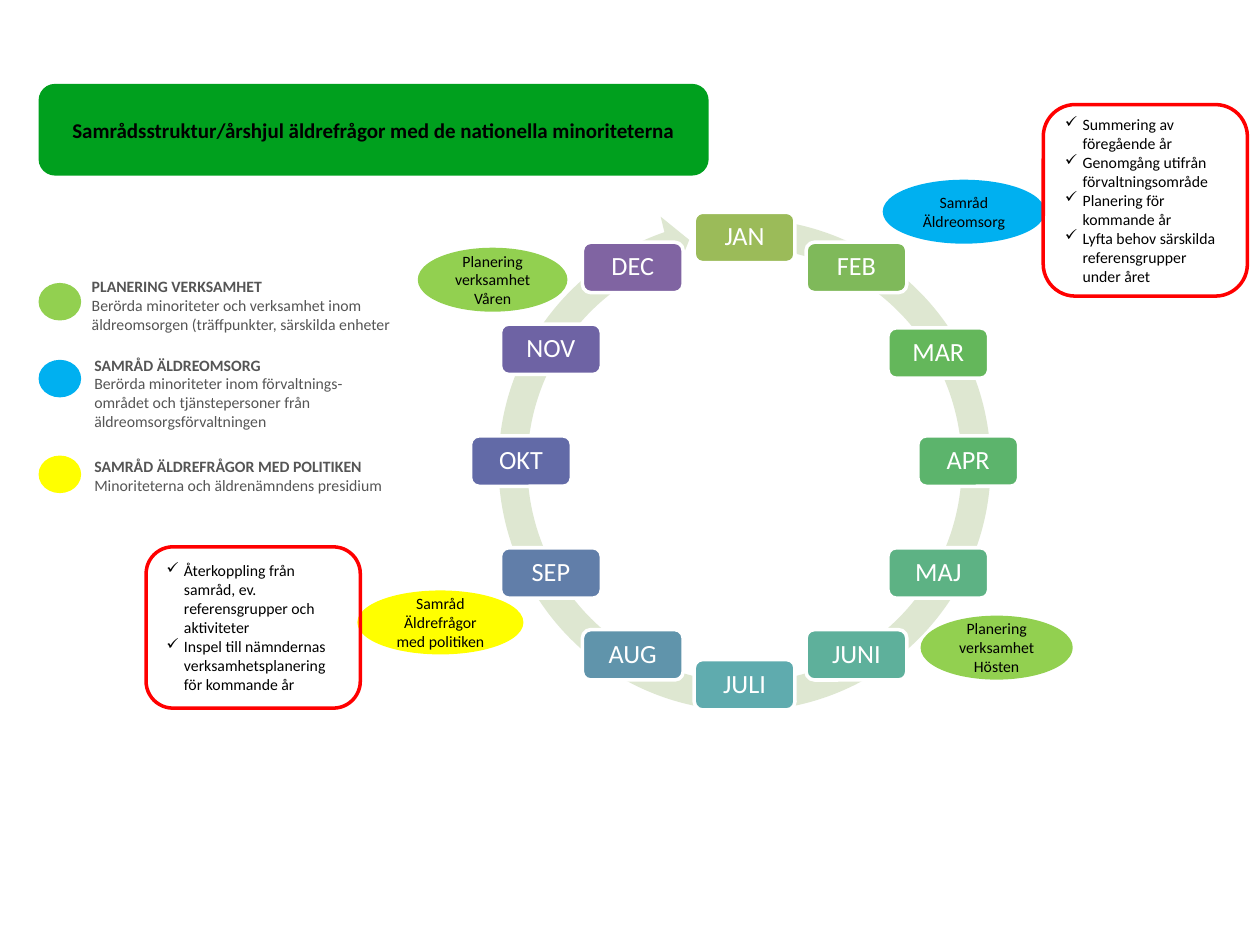
from math import cos, radians, sin

from lxml.etree import SubElement
from pptx import Presentation
from pptx.dml.color import RGBColor
from pptx.enum.shapes import MSO_SHAPE
from pptx.enum.text import MSO_ANCHOR, MSO_AUTO_SIZE, PP_ALIGN
from pptx.oxml.ns import qn
from pptx.util import Inches, Pt

COLORS = {
    "title": "00A01E", "planning": "92D050", "elderly_care": "00B0F0",
    "politics": "FFFF00", "outline": "FF0000", "ring": "DEE7D1",
    "text": "000000", "legend": "555555", "white": "FFFFFF",
}
MONTHS = {
    "JAN": "9BBB59", "FEB": "7FB95A", "MAR": "64B75B", "APR": "5CB46C",
    "MAJ": "5DB284", "JUNI": "5EB09B", "JULI": "5FABAE", "AUG": "6094AB",
    "SEP": "617EA9", "OKT": "626AA7", "NOV": "6E63A4", "DEC": "8064A2",
}
MONTH_NUDGE = {"MAR": 0.3}
COLUMNS, ROWS = 100, 75
CELL = Inches(0.1)

# Legend rows: colour, marker top, text column, text top, text height, heading, lines
LEGEND = [
    ("planning", 22.6, 6.3, 21.5, 5.6, "PLANERING VERKSAMHET",
     ["Berörda minoriteter och verksamhet inom äldreomsorgen "
      "(träffpunkter, särskilda enheter"]),
    ("elderly_care", 28.7, 6.5, 27.7, 7.1, "SAMRÅD ÄLDREOMSORG",
     ["Berörda minoriteter inom förvaltnings-",
      "området och tjänstepersoner från äldreomsorgsförvaltningen"]),
    ("politics", 36.3, 6.5, 35.8, 4, "SAMRÅD ÄLDREFRÅGOR MED POLITIKEN",
     ["Minoriteterna och äldrenämndens presidium"]),
]
# Events: colour, left, top, width, text
EVENTS = [
    ("planning", 33.3, 19.8, 11.6, "Planering verksamhet Våren"),
    ("elderly_care", 70.2, 14.4, 12.6, "Samråd Äldreomsorg"),
    ("planning", 73.2, 49, 11.8, "Planering verksamhet Hösten"),
    ("politics", 28.5, 47, 12.9, "Samråd Äldrefrågor med politiken"),
]
CHECKLISTS = [
    ((82.8, 8.3, 16.2, 15.2),
     ["Summering av föregående år", "Genomgång utifrån förvaltningsområde",
      "Planering för kommande år",
      "Lyfta behov särskilda referensgrupper under året"]),
    ((11.6, 43.4, 17, 12.8),
     ["Återkoppling från samråd, ev. referensgrupper och aktiviteter",
      "Inspel till nämndernas verksamhetsplanering för kommande år"]),
]


def rgb(value):
    return RGBColor.from_string(value)


def add_check_mark(paragraph):
    properties = paragraph._p.get_or_add_pPr()
    properties.set("marL", str(Inches(0.14)))
    properties.set("indent", str(-Inches(0.14)))
    SubElement(properties, qn("a:buChar")).set("char", "✓")


def write_text(shape, lines, size=9, color=COLORS["text"], bold=False, heading=None,
               align=PP_ALIGN.CENTER, anchor=MSO_ANCHOR.MIDDLE, checks=False,
               inset=None, line_spacing=None):
    frame = shape.text_frame
    frame.word_wrap = True
    frame.vertical_anchor = anchor
    if inset is not None:
        frame.margin_left = frame.margin_right = Inches(inset)
        frame.margin_top = frame.margin_bottom = Inches(inset)
    for index, line in enumerate(lines):
        paragraph = frame.paragraphs[0] if index == 0 else frame.add_paragraph()
        paragraph.alignment = align
        if line_spacing:
            paragraph.line_spacing = line_spacing
        if checks:
            add_check_mark(paragraph)
        pieces = [(line, bold)]
        if heading and index == 0:
            pieces.insert(0, (heading, True))
        for position, (text, is_bold) in enumerate(pieces):
            if position:
                paragraph.add_line_break()
            run = paragraph.add_run()
            run.text = text
            run.font.name = "Calibri"
            run.font.size = Pt(size)
            run.font.bold = is_bold
            run.font.color.rgb = rgb(color)


class SlideBuilder:
    """Draws on one slide, with lengths in grid columns and rows."""

    def __init__(self, presentation):
        presentation.slide_width = CELL * COLUMNS
        presentation.slide_height = CELL * ROWS
        self.slide = presentation.slides.add_slide(presentation.slide_layouts[6])

    def place(self, *box):
        return [round(CELL * length) for length in box]

    def add_shape(self, kind, box, fill=None, line=None):
        shape = self.slide.shapes.add_shape(kind, *self.place(*box))
        shape.shadow.inherit = False
        if fill:
            shape.fill.solid()
            shape.fill.fore_color.rgb = rgb(fill)
        else:
            shape.fill.background()
        if line:
            shape.line.color.rgb = rgb(line)
            shape.line.width = Pt(2)
        else:
            shape.line.fill.background()
        return shape

    def add_ellipse(self, box, color):
        return self.add_shape(MSO_SHAPE.OVAL, box, color, color)

    def add_panel(self, box, fill=None, line=None):
        return self.add_shape(MSO_SHAPE.ROUNDED_RECTANGLE, box, fill, line)

    def add_text(self, box, lines, **text_format):
        shape = self.slide.shapes.add_textbox(*self.place(*box))
        write_text(shape, lines, **text_format)
        shape.text_frame.auto_size = MSO_AUTO_SIZE.SHAPE_TO_FIT_TEXT

    def add_year_wheel(self, center_x=59.1, center_y=36.6, radius=17.75):
        ring = self.add_shape(MSO_SHAPE.CIRCULAR_ARROW, (38.3, 16.1, 41.6, 41.6),
                              COLORS["ring"])
        for index, value in enumerate((0.055, 3.307, 150.405, 166.548, 0.058)):
            ring.adjustments[index] = value
        width, height = 8, 4
        for index, (month, color) in enumerate(MONTHS.items()):
            angle = radians(index * 360 / len(MONTHS))
            left = center_x + radius * sin(angle) - width / 2
            top = center_y - radius * cos(angle) - height / 2 + MONTH_NUDGE.get(month, 0)
            panel = self.add_panel((left, top, width, height), color, COLORS["white"])
            write_text(panel, [month], size=15, color=COLORS["white"],
                       inset=0.06, line_spacing=0.9)


def main():
    presentation = Presentation()
    builder = SlideBuilder(presentation)
    builder.add_year_wheel()

    title = builder.add_panel((3.2, 6.8, 52.9, 7), COLORS["title"], COLORS["title"])
    write_text(title, ["Samrådsstruktur/årshjul äldrefrågor med de nationella minoriteterna"],
               size=12, bold=True)

    for color, marker_top, left, top, height, heading, lines in LEGEND:
        builder.add_ellipse((3.2, marker_top, 3.1, 2.7), COLORS[color])
        builder.add_text((left, top, 27, height), lines, heading=heading,
                         color=COLORS["legend"], align=PP_ALIGN.LEFT,
                         anchor=MSO_ANCHOR.TOP)

    for color, left, top, width, text in EVENTS:
        event = builder.add_ellipse((left, top, width, 4.8), COLORS[color])
        write_text(event, [text])

    for box, lines in CHECKLISTS:
        panel = builder.add_panel(box, line=COLORS["outline"])
        write_text(panel, lines, align=PP_ALIGN.LEFT, checks=True)

    presentation.save("out.pptx")


if __name__ == "__main__":
    main()
